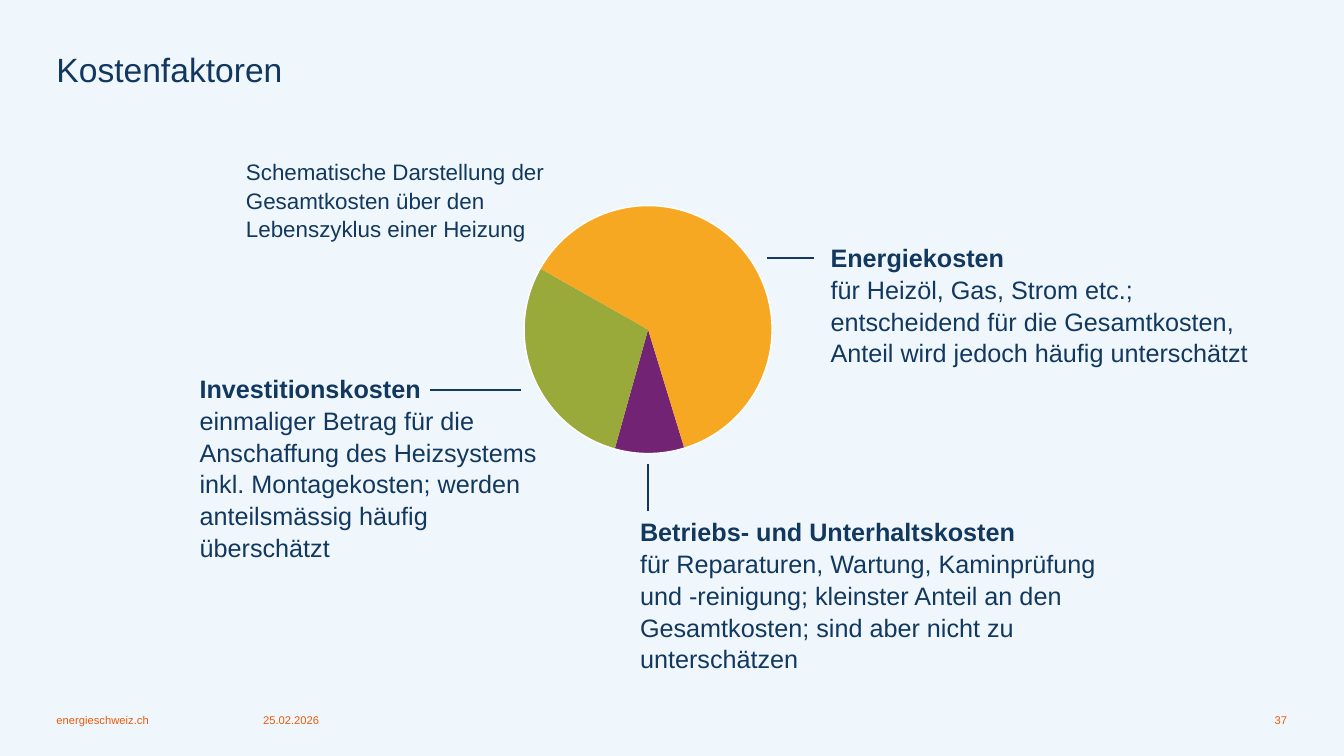
from lxml.etree import SubElement
from pptx import Presentation
from pptx.dml.color import RGBColor
from pptx.enum.shapes import MSO_CONNECTOR, MSO_SHAPE
from pptx.enum.text import MSO_ANCHOR, PP_ALIGN
from pptx.oxml.ns import qn
from pptx.util import Pt

NAVY = "12385F"
ORANGE = "EA5B0C"
PIE_BOX = (374.4, 146.9, 177.1, 177.1)
SLICES = [("732373", 73, 105.6), ("99A93A", 105.6, 209.5), ("F7A823", 209.5, 73)]
LEADERS = [
    (307.4, 278.6, 372.2, 278.6),
    (547.9, 184.3, 581.8, 184.3),
    (463, 365, 463, 331.2),
]
COST_FACTORS = [
    ((593.3, 172.1, 324, 87.1), "Energiekosten",
     "für Heizöl, Gas, Strom etc.; entscheidend für die Gesamtkosten, "
     "Anteil wird jedoch häufig unterschätzt"),
    ((142.6, 265.7, 254.9, 131), "Investitionskosten",
     "einmaliger Betrag für die Anschaffung des Heizsystems inkl. "
     "Montagekosten; werden anteilsmässig häufig überschätzt"),
    ((457.2, 367.9, 329, 108.7), "Betriebs- und Unterhaltskosten",
     "für Reparaturen, Wartung, Kaminprüfung und -reinigung; kleinster Anteil "
     "an den Gesamtkosten; sind aber nicht zu unterschätzen"),
]
FOOTERS = [
    ((40.3, 508.3, 141.8, 10.8), "energieschweiz.ch", PP_ALIGN.LEFT),
    ((187.9, 508.3, 119.5, 10.8), "25.02.2026", PP_ALIGN.LEFT),
    ((835.2, 508.3, 84.2, 10.8), "37", PP_ALIGN.RIGHT),
]


def color(hex_value):
    return RGBColor.from_string(hex_value)


def points(values):
    return [Pt(value) for value in values]


def fill_text(shape, lines, size, hex_value=NAVY, align=PP_ALIGN.LEFT,
              anchor=MSO_ANCHOR.TOP, spacing=1.0):
    frame = shape.text_frame
    frame.word_wrap = True
    frame.vertical_anchor = anchor
    frame.margin_left = frame.margin_top = frame.margin_right = frame.margin_bottom = Pt(0)
    frame.text = "\n".join(lines)
    for paragraph in frame.paragraphs:
        paragraph.alignment = align
        paragraph.line_spacing = spacing
        for run in paragraph.runs:
            run.font.name = "Arial"
            run.font.size = Pt(size)
            run.font.bold = False
            run.font.color.rgb = color(hex_value)


def set_title(slide, text):
    title = slide.shapes.title
    title.left, title.top, title.width, title.height = points((40.3, 34.6, 300.2, 62.6))
    fill_text(title, [text], 24)


def add_text(slide, box, lines, size, **options):
    shape = slide.shapes.add_textbox(*points(box))
    fill_text(shape, lines, size, **options)
    return shape


def add_cost_factor(slide, box, heading, description):
    shape = add_text(slide, box, [heading, description], 18, spacing=1.05)
    shape.text_frame.paragraphs[0].runs[0].font.bold = True


def add_leader(slide, ends):
    connector = slide.shapes.add_connector(MSO_CONNECTOR.STRAIGHT, *points(ends))
    connector.line.color.rgb = color(NAVY)
    connector.line.width = Pt(1)
    SubElement(connector._element.spPr, qn("a:effectLst"))


def add_slice(slide, hex_value, start, end):
    shape = slide.shapes.add_shape(MSO_SHAPE.ARC, *points(PIE_BOX))
    shape.shadow.inherit = False
    shape.adjustments[0] = start * 0.6
    shape.adjustments[1] = end * 0.6
    shape.fill.solid()
    shape.fill.fore_color.rgb = color(hex_value)
    shape.line.color.rgb = color("FFFFFF")
    shape.line.width = Pt(1)


def main():
    presentation = Presentation()
    presentation.slide_width, presentation.slide_height = Pt(960), Pt(540)
    slide = presentation.slides.add_slide(presentation.slide_layouts[5])
    slide.background.fill.solid()
    slide.background.fill.fore_color.rgb = color("F0F7FC")

    set_title(slide, "Kostenfaktoren")
    for box, text, align in FOOTERS:
        add_text(slide, box, [text], 8, hex_value=ORANGE, align=align,
                 anchor=MSO_ANCHOR.BOTTOM)
    for ends in LEADERS:
        add_leader(slide, ends)
    for box, heading, description in COST_FACTORS:
        add_cost_factor(slide, box, heading, description)
    add_text(slide, (175.7, 112.3, 229, 58.3),
             ["Schematische Darstellung der Gesamtkosten über den Lebenszyklus einer Heizung"],
             16, spacing=1.05)
    for hex_value, start, end in SLICES:
        add_slice(slide, hex_value, start, end)
    presentation.save("out.pptx")


if __name__ == "__main__":
    main()
